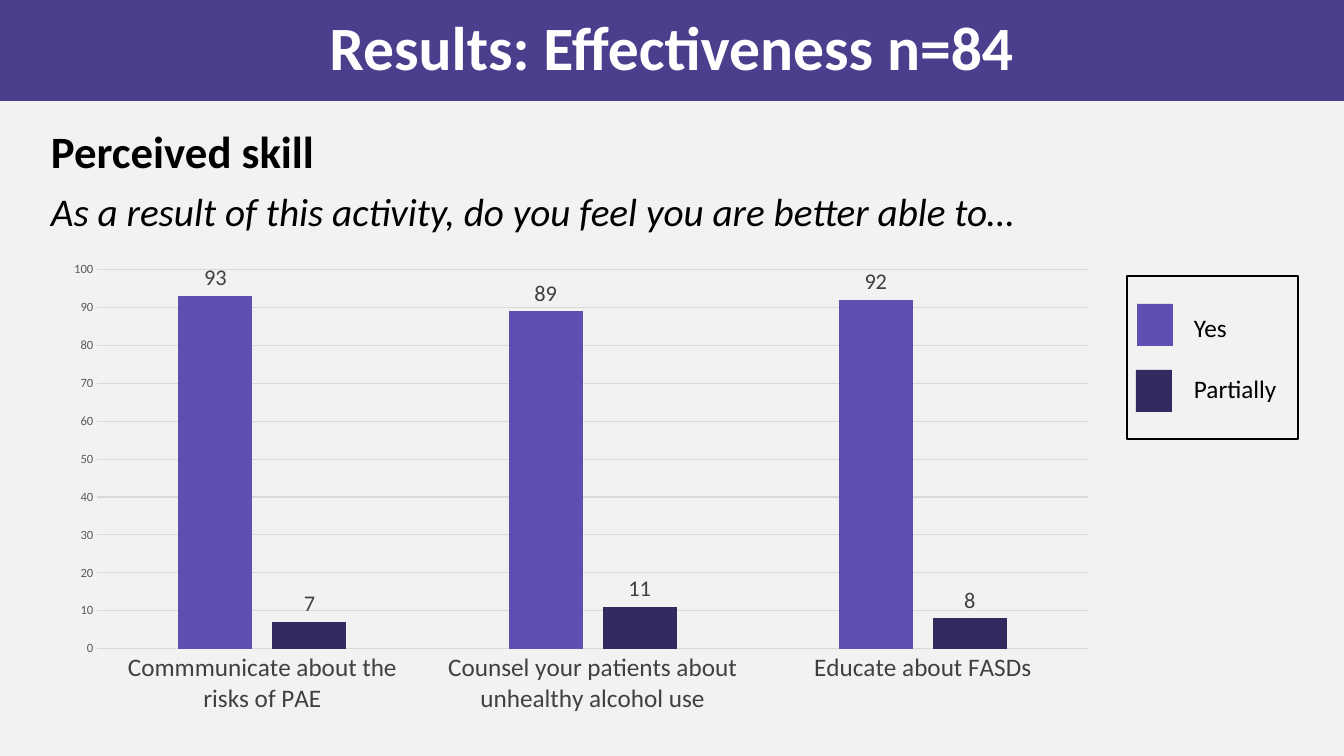
from pptx import Presentation
from pptx.chart.data import CategoryChartData
from pptx.dml.color import RGBColor
from pptx.enum.chart import XL_CHART_TYPE as ChartType, XL_LABEL_POSITION as LabelPos, XL_TICK_MARK as TickMark
from pptx.enum.shapes import MSO_SHAPE as Preset
from pptx.enum.text import MSO_ANCHOR as Anchor, PP_ALIGN as Align
from pptx.util import Pt

EMU_PER_PX = 914400 / 100.8
FONT = "Calibri"
ANSWERS = [("Yes", "5E50B0", (93, 89, 92)), ("Partially", "322B5F", (7, 11, 8))]


def px(*lengths):
    return [round(length * EMU_PER_PX) for length in lengths]


def style(font, size, color, bold=False, italic=False):
    font.name, font.size, font.bold, font.italic = FONT, Pt(size), bold, italic
    font.color.rgb = RGBColor.from_string(color)


deck = Presentation()
deck.slide_width, deck.slide_height = px(1344, 756)
slide = deck.slides.add_slide(deck.slide_layouts[6])
slide.background.fill.solid()
slide.background.fill.fore_color.rgb = RGBColor.from_string("F2F2F2")
shapes = slide.shapes

# Title band
band = shapes.add_shape(Preset.RECTANGLE, *px(0, 0, 1344, 101))
band.shadow.inherit = False
band.fill.solid()
band.fill.fore_color.rgb = RGBColor.from_string("4A3F8D")
band.line.fill.background()
band.text_frame.vertical_anchor = Anchor.MIDDLE
title = band.text_frame.paragraphs[0]
title.alignment = Align.CENTER
title.line_spacing = 0.9
run = title.add_run()
run.text = "Results: Effectiveness n=84"
style(run.font, 44, "FFFFFF", bold=True)

# Heading and question
intro = shapes.add_textbox(*px(41, 108, 1261, 67)).text_frame
intro.word_wrap = True
heading, question = intro.paragraphs[0], intro.add_paragraph()
for line, text, size, bold in [
    (heading, "Perceived skill", 32, True),
    (question, "As a result of this activity, do you feel you are better able to…", 28, False),
]:
    line.line_spacing = 1.2
    run = line.add_run()
    run.text = text
    style(run.font, size, "000000", bold=bold, italic=not bold)

# Chart
data = CategoryChartData()
data.categories = [
    "Commmunicate about the risks of PAE",
    "Counsel your patients about unhealthy alcohol use",
    "Educate about FASDs",
]
for answer, _, percents in ANSWERS:
    data.add_series(answer, percents)
chart = shapes.add_chart(ChartType.COLUMN_CLUSTERED, *px(53, 253, 1056, 470), data).chart
style(chart.font, 10, "000000")
chart.has_title = False
chart.has_legend = False

plot = chart.plots[0]
plot.gap_width, plot.overlap = 219, -27
plot.vary_by_categories = False
for series, (_, color, _) in zip(plot.series, ANSWERS):
    series.format.fill.solid()
    series.format.fill.fore_color.rgb = RGBColor.from_string(color)
    labels = series.data_labels
    labels.show_value = True
    labels.position = LabelPos.OUTSIDE_END
    style(labels.font, 16, "404040")

topics, scale = chart.category_axis, chart.value_axis
for axis, size, color in [(topics, 18, "404040"), (scale, 9, "595959")]:
    axis.major_tick_mark = axis.minor_tick_mark = TickMark.NONE
    style(axis.tick_labels.font, size, color)
scale.minimum_scale, scale.maximum_scale, scale.major_unit = 0, 100, 10
scale.format.line.fill.background()
for rule in (topics.format.line, scale.major_gridlines.format.line):
    rule.color.rgb = RGBColor.from_string("D9D9D9")
    rule.width = Pt(0.75)

# Legend
legend = shapes.add_shape(Preset.RECTANGLE, *px(1127, 276, 171, 163))
legend.shadow.inherit = False
legend.fill.background()
legend.line.color.rgb = RGBColor.from_string("000000")
legend.line.width = Pt(1)
key = legend.text_frame
key.vertical_anchor = Anchor.TOP
key.margin_left, key.margin_top, key.margin_right = px(67, 36, 5)
for row, (answer, color, _) in enumerate(ANSWERS):
    entry = key.add_paragraph() if row else key.paragraphs[0]
    entry.alignment = Align.LEFT
    entry.space_before = Pt(22 * row)
    run = entry.add_run()
    run.text = answer
    style(run.font, 18, "000000")

    swatch = shapes.add_shape(Preset.RECTANGLE, *px(1137 - row, 304 + 66 * row, 36, 42))
    swatch.shadow.inherit = False
    swatch.fill.solid()
    swatch.fill.fore_color.rgb = RGBColor.from_string(color)
    swatch.line.fill.background()

deck.save("out.pptx")
